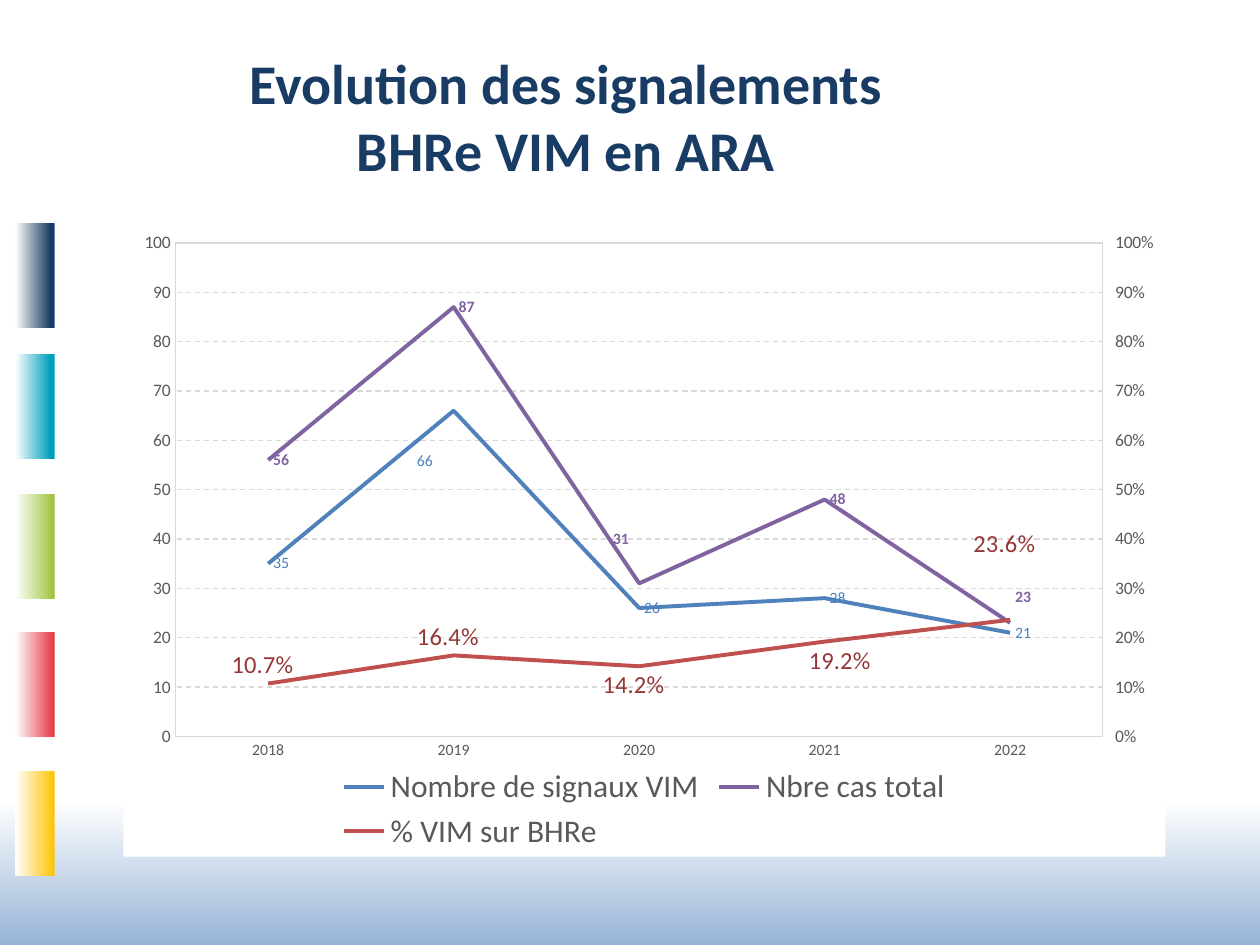
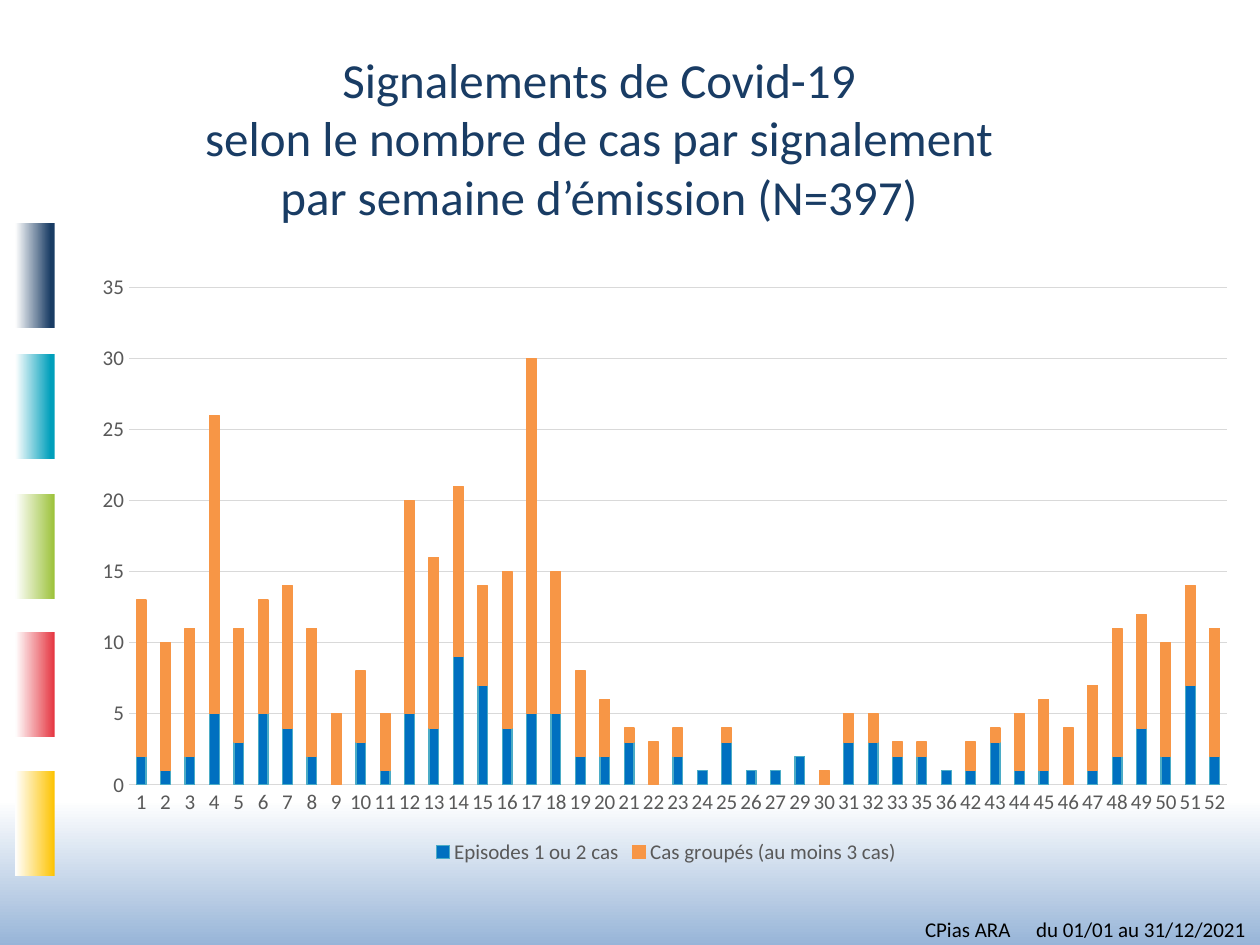
from copy import deepcopy
from dataclasses import dataclass

from pptx import Presentation
from pptx.chart.axis import CategoryAxis, ValueAxis
from pptx.chart.data import CategoryChartData
from pptx.dml.color import RGBColor
from pptx.enum.chart import XL_CHART_TYPE as ChartType
from pptx.enum.chart import XL_LABEL_POSITION as LabelPosition
from pptx.enum.chart import XL_LEGEND_POSITION as LegendPosition
from pptx.enum.chart import XL_TICK_MARK as TickMark
from pptx.enum.dml import MSO_LINE as Dash
from pptx.enum.shapes import MSO_SHAPE as Preset
from pptx.enum.text import MSO_ANCHOR as Anchor
from pptx.enum.text import MSO_AUTO_SIZE as AutoSize
from pptx.enum.text import PP_ALIGN as Align
from pptx.oxml import parse_xml
from pptx.oxml.ns import nsdecls, qn
from pptx.util import Pt


@dataclass(frozen=True)
class Theme:
    font: str = "Calibri"
    navy: str = "193C64"
    teal: str = "009FBB"
    green: str = "9CC239"
    red: str = "E53540"
    yellow: str = "FDC300"
    sky: str = "95B3D7"
    white: str = "FFFFFF"
    black: str = "000000"
    grey: str = "595959"
    grid: str = "D9D9D9"
    signals: str = "4F81BD"
    cases: str = "8064A2"
    share: str = "C0504D"
    share_label: str = "953735"
    episodes: str = "0070C0"
    episodes_edge: str = "4BACC6"
    clusters: str = "F79646"
    title_sizes: tuple = (32, 28)
    small: int = 9
    axis: int = 10
    body: int = 12
    label: int = 14
    legend: int = 18


theme = Theme()
color = RGBColor.from_string


def manual_layout(**values):
    children = "".join(f'<c:{key} val="{value}"/>' for key, value in values.items())
    return parse_xml(f'<c:layout {nsdecls("c")}><c:manualLayout>{children}</c:manualLayout></c:layout>')


def add_styled_chart(slide, kind, data, box, plot_box, top, step, sizes):
    chart = slide.shapes.add_chart(kind, *map(Pt, box), data).chart
    chart.has_title = False
    chart.font.name, chart.font.size = theme.font, Pt(theme.axis)
    chart.has_legend = True
    chart.legend.position = LegendPosition.BOTTOM
    chart.legend.include_in_layout = False
    category_axis, value_axis = chart.category_axis, chart.value_axis
    value_axis.minimum_scale, value_axis.maximum_scale, value_axis.major_unit = 0, top, step
    for axis in (category_axis, value_axis):
        axis.major_tick_mark = axis.minor_tick_mark = TickMark.NONE
    category_axis.has_major_gridlines = False
    value_axis.has_major_gridlines = True
    value_axis.format.line.fill.background()
    for line in (category_axis.format.line, value_axis.major_gridlines.format.line):
        line.color.rgb, line.width = color(theme.grid), Pt(0.75)
    fonts = (category_axis.tick_labels.font, value_axis.tick_labels.font, chart.legend.font)
    for font, size in zip(fonts, sizes):
        font.name, font.size, font.color.rgb = theme.font, Pt(size), color(theme.grey)
    plot_area = chart.element.find(".//" + qn("c:plotArea"))
    for layout_element in plot_area.findall(qn("c:layout")):
        plot_area.remove(layout_element)
    left, top_edge, width, height = plot_box
    plot_area.insert(0, manual_layout(
        layoutTarget="inner", xMode="edge", yMode="edge", x=left, y=top_edge, w=width, h=height))
    return chart


presentation = Presentation()
presentation.slide_width, presentation.slide_height = Pt(720), Pt(540)
title_layout = presentation.slide_layouts[5]
titles = [
    ("Evolution des signalements BHRe VIM en ARA", (133, 15, 381, 102), True),
    ("Signalements de Covid-19\vselon le nombre de cas par signalement\v"
     "par semaine d’émission (N=397)", (105, 29, 474.5, 99), False),
]
slides = []
for (text, box, bold), size in zip(titles, theme.title_sizes):
    slide = presentation.slides.add_slide(title_layout)
    title = slide.shapes.title
    title.left, title.top, title.width, title.height = map(Pt, box)
    frame = title.text_frame
    frame.text = text
    frame.word_wrap, frame.auto_size, frame.vertical_anchor = True, AutoSize.NONE, Anchor.MIDDLE
    paragraph = frame.paragraphs[0]
    paragraph.alignment = Align.CENTER
    for run in paragraph.runs:
        run.font.name, run.font.size, run.font.bold = theme.font, Pt(size), bold
        run.font.color.rgb = color(theme.navy)
    slides.append(slide)
vim_slide, covid_slide = slides

bands = [((0, 457, 720, 85), 180, theme.sky, 0)]
side_bands = [
    (146, theme.navy, 0.1), (221, theme.teal, 0.1), (301, theme.green, 0),
    (380, theme.red, 0), (459.5, theme.yellow, 0),
]
bands += [((-10, top, 60, 22.5), 90, tint, start) for top, tint, start in side_bands]
for index, (box, rotation, tint, start) in enumerate(bands):
    band = vim_slide.shapes.add_shape(Preset.RECTANGLE, *map(Pt, box))
    band.rotation = rotation
    band.shadow.inherit = False
    band.line.fill.background()
    band.fill.gradient()
    band.fill.gradient_angle = 270
    for stop, stop_color, position in zip(band.fill.gradient_stops, (tint, theme.white), (start, 1)):
        stop.color.rgb, stop.position = color(stop_color), position
    title_layout.shapes.element.insert(2 + index, band.element)

vim_series = [
    ("Nombre de signaux VIM", (35, 66, 26, 28, 21), "General",
     theme.signals, theme.signals, theme.small, False, {1: (-0.04, 0.08)}),
    ("Nbre cas total", (56, 87, 31, 48, 23), "General",
     theme.cases, theme.cases, theme.small, True, {2: (-0.03, -0.07), 4: (0, -0.04)}),
    ("% VIM sur BHRe", (0.107, 0.164, 0.142, 0.192, 0.236), "0.0%",
     theme.share, theme.share_label, theme.label, False,
     {0: (-0.04, -0.03), 1: (-0.04, -0.03), 2: (-0.04, 0.03), 3: (-0.02, 0.03), 4: (-0.04, -0.12)}),
]
vim_data = CategoryChartData()
vim_data.categories = ["2018", "2019", "2020", "2021", "2022"]
for name, values, number_format, *_ in vim_series:
    vim_data.add_series(name, values, number_format)
vim_chart = add_styled_chart(
    vim_slide, ChartType.LINE, vim_data, (70.5, 128, 595.5, 361.5), (0.05, 0.03, 0.89, 0.78),
    100, 10, (theme.small, theme.axis, theme.legend))
vim_chart.value_axis.major_gridlines.format.line.dash_style = Dash.DASH

series_elements = vim_chart.element.xpath(".//c:ser")
for series, element, settings in zip(vim_chart.plots[0].series, series_elements, vim_series):
    _, _, number_format, line_color, label_color, size, bold, offsets = settings
    series.smooth = False
    series.format.line.color.rgb, series.format.line.width = color(line_color), Pt(2.25)
    labels = series.data_labels
    labels.show_value = True
    labels.number_format, labels.number_format_is_linked = number_format, False
    moved_labels = [series.points[index].data_label for index in offsets]
    for label in (labels, *moved_labels):
        label.position = LabelPosition.RIGHT
        label.font.name, label.font.size, label.font.bold = theme.font, Pt(size), bold
        label.font.color.rgb = color(label_color)
    for label_element, (x, y) in zip(element.xpath(".//c:dLbl"), offsets.values()):
        label_element.insert(1, manual_layout(x=x, y=y))
        label_element.insert(2, parse_xml(
            f'<c:numFmt {nsdecls("c")} formatCode="{number_format}" sourceLinked="0"/>'))
    for leader in element.xpath(".//c:showLeaderLines"):
        leader.set("val", "0")

plot_area = vim_chart.element.find(".//" + qn("c:plotArea"))
left_lines, category_element, value_element = (
    plot_area.find(qn(tag)) for tag in ("c:lineChart", "c:catAx", "c:valAx"))
right_lines, hidden_element, right_element = map(
    deepcopy, (left_lines, category_element, value_element))
left_lines.remove(series_elements[2])
for element in right_lines.findall(qn("c:ser"))[:2]:
    right_lines.remove(element)
for reference, identifier in zip(right_lines.findall(qn("c:axId")), ("101", "102")):
    reference.set("val", identifier)
for element, own, other in ((hidden_element, "101", "102"), (right_element, "102", "101")):
    element.find(qn("c:axId")).set("val", own)
    element.find(qn("c:crossAx")).set("val", other)
left_lines.addnext(right_lines)
value_element.addnext(right_element)
right_element.addnext(hidden_element)
CategoryAxis(hidden_element).visible = False
right_element.find(qn("c:axPos")).set("val", "r")
right_element.find(qn("c:crosses")).set("val", "max")
right_axis = ValueAxis(right_element)
right_axis.has_major_gridlines = False
right_axis.maximum_scale, right_axis.major_unit = 1, 0.1
right_axis.major_tick_mark = TickMark.OUTSIDE
right_axis.tick_labels.number_format = "0%"
right_axis.tick_labels.number_format_is_linked = False

plot_area.append(parse_xml(
    f'<c:spPr {nsdecls("c", "a")}><a:noFill/><a:ln w="{Pt(0.75)}"><a:solidFill>'
    f'<a:srgbClr val="{theme.grid}"/></a:solidFill></a:ln></c:spPr>'))
vim_chart.element.find(qn("c:chart")).addnext(parse_xml(
    f'<c:spPr {nsdecls("c", "a")}><a:solidFill><a:srgbClr val="{theme.white}"/></a:solidFill>'
    '<a:ln><a:noFill/></a:ln></c:spPr>'))

weeks = [*range(1, 28), *range(29, 34), 35, 36, *range(42, 53)]
episodes = [
    2, 1, 2, 5, 3, 5, 4, 2, None, 3, 1, 5, 4, 9, 7, 4, 5, 5, 2, 2, 3, None, 2, 1, 3, 1, 1,
    2, None, 3, 3, 2, 2, 1, 1, 3, 1, 1, None, 1, 2, 4, 2, 7, 2,
]
clusters = [
    11, 9, 9, 21, 8, 8, 10, 9, 5, 5, 4, 15, 12, 12, 7, 11, 25, 10, 6, 4, 1, 3, 2, None, 1, None, None,
    None, 1, 2, 2, 1, 1, None, 2, 1, 4, 5, 4, 6, 9, 8, 8, 7, 9,
]
covid_data = CategoryChartData()
covid_data.categories = [str(week) for week in weeks]
covid_data.add_series("Episodes 1 ou 2 cas", episodes)
covid_data.add_series("Cas groupés (au moins 3 cas)", clusters)
covid_chart = add_styled_chart(
    covid_slide, ChartType.COLUMN_STACKED, covid_data, (47, 150.5, 667.5, 346.5),
    (0.04, 0.04, 0.94, 0.82), 35, 5, (theme.body,) * 3)
covid_plot = covid_chart.plots[0]
covid_plot.gap_width, covid_plot.overlap, covid_plot.vary_by_categories = 150, 100, False
covid_colors = [(theme.episodes, theme.episodes_edge), (theme.clusters, theme.clusters)]
for series, (fill_color, edge_color) in zip(covid_plot.series, covid_colors):
    series.invert_if_negative = False
    series.format.fill.solid()
    series.format.fill.fore_color.rgb = color(fill_color)
    series.format.line.color.rgb, series.format.line.width = color(edge_color), Pt(0.75)

period_box = covid_slide.shapes.add_textbox(Pt(521.5), Pt(520), Pt(198.5), Pt(21.5))
frame = period_box.text_frame
frame.word_wrap, frame.margin_right = True, 0
frame.text = "CPias ARA\tdu 01/01 au 31/12/2021"
paragraph = frame.paragraphs[0]
paragraph.alignment = Align.LEFT
paragraph.runs[0].font.name = theme.font
paragraph.runs[0].font.size = Pt(theme.body)
paragraph.runs[0].font.color.rgb = color(theme.black)
paragraph_properties = frame._txBody.find(".//" + qn("a:pPr"))
paragraph_properties.append(parse_xml(
    f'<a:tabLst {nsdecls("a")}><a:tab pos="{Pt(63.5)}" algn="l"/></a:tabLst>'))

presentation.save("out.pptx")
